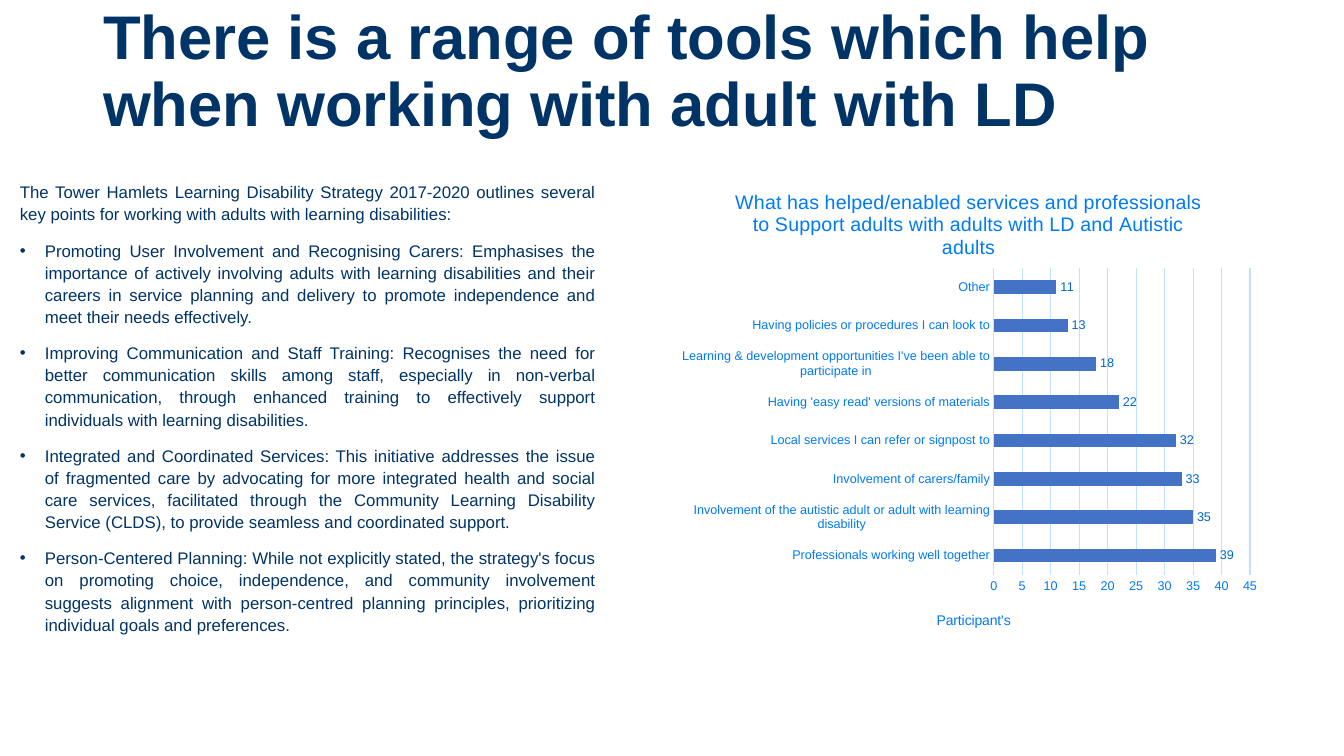
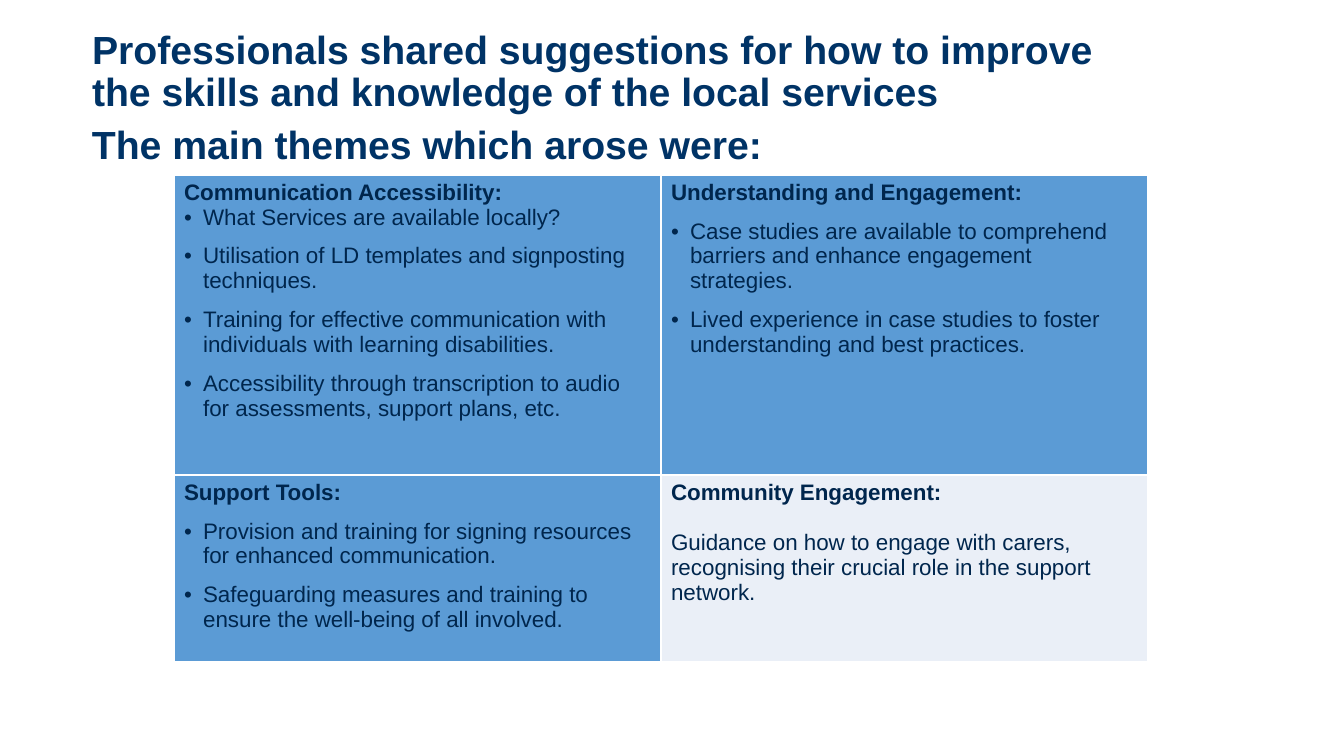
from lxml import etree
from pptx import Presentation
from pptx.chart.data import CategoryChartData
from pptx.dml.color import RGBColor
from pptx.enum.chart import XL_CHART_TYPE, XL_LABEL_POSITION, XL_TICK_MARK
from pptx.enum.text import MSO_ANCHOR, MSO_AUTO_SIZE, PP_ALIGN
from pptx.oxml.ns import qn
from pptx.util import Pt

BAR = XL_CHART_TYPE.BAR_CLUSTERED
OUTSIDE_END = XL_LABEL_POSITION.OUTSIDE_END
NO_TICK = XL_TICK_MARK.NONE
MIDDLE, TOP = MSO_ANCHOR.MIDDLE, MSO_ANCHOR.TOP
LEFT, JUSTIFY = PP_ALIGN.LEFT, PP_ALIGN.JUSTIFY
NO_FIT = MSO_AUTO_SIZE.NONE

FONT = "Arial"
TITLE_ONLY = 5
EMU_PER_PX = 914400 / 100.8
COLORS = {
    "white": "FFFFFF",
    "navy": "003366",
    "ink": "00264D",
    "chart_text": "007AF5",
    "label": "0066CC",
    "grid": "C2E0FF",
    "bar": "4472C4",
    "theme_cell": "5B9BD5",
    "pale_cell": "EAEFF7",
}

STRATEGY_INTRO = (
    "The Tower Hamlets Learning Disability Strategy 2017-2020 outlines several key points "
    "for working with adults with learning disabilities:"
)
STRATEGY_POINTS = [
    "Promoting User Involvement and Recognising Carers: Emphasises the importance of actively "
    "involving adults with learning disabilities and their careers in service planning and "
    "delivery to promote independence and meet their needs effectively.",
    "Improving Communication and Staff Training: Recognises the need for better communication "
    "skills among staff, especially in non-verbal communication, through enhanced training to "
    "effectively support individuals with learning disabilities.",
    "Integrated and Coordinated Services: This initiative addresses the issue of fragmented "
    "care by advocating for more integrated health and social care services, facilitated "
    "through the Community Learning Disability Service (CLDS), to provide seamless and "
    "coordinated support.",
    "Person-Centered Planning: While not explicitly stated, the strategy's focus on promoting "
    "choice, independence, and community involvement suggests alignment with person-centred "
    "planning principles, prioritizing individual goals and preferences.",
]
HELPFUL_TOOLS = {
    "Professionals working well together": 39,
    "Involvement of the autistic adult or adult with learning disability": 35,
    "Involvement of carers/family": 33,
    "Local services I can refer or signpost to": 32,
    "Having 'easy read' versions of materials": 22,
    "Learning & development opportunities I've been able to participate in": 18,
    "Having policies or procedures I can look to": 13,
    "Other": 11,
}
THEMES = [
    [
        ("Communication Accessibility:", [
            "What Services are available locally?",
            "Utilisation of LD templates and signposting techniques.",
            "Training for effective communication with individuals with learning disabilities.",
            "Accessibility through transcription to audio for assessments, support plans, etc.",
        ], 0),
        ("Understanding and Engagement:", [
            "Case studies are available to comprehend barriers and enhance engagement strategies.",
            "Lived experience in case studies to foster understanding and best practices.",
        ], 10),
    ],
    [
        ("Support Tools:", [
            "Provision and training for signing resources for enhanced communication.",
            "Safeguarding measures and training to ensure the well-being of all involved.",
        ], 10),
        ("Community Engagement:",
         "Guidance on how to engage with carers, recognising their crucial role in the "
         "support network.", 18),
    ],
]


def px(length):
    return round(length * EMU_PER_PX)


def rgb(name):
    return RGBColor.from_string(COLORS[name])


def style_font(font, size, color, bold=False):
    font.name = FONT
    font.size = Pt(size)
    font.bold = bold
    font.color.rgb = rgb(color)


def set_bounds(shape, left, top, width, height):
    shape.left, shape.top = px(left), px(top)
    shape.width, shape.height = px(width), px(height)


def add_bullet(paragraph, indent):
    properties = paragraph._p.get_or_add_pPr()
    properties.set("marL", str(px(indent)))
    properties.set("indent", str(-px(indent)))
    etree.SubElement(properties, qn("a:buFont")).set("typeface", FONT)
    etree.SubElement(properties, qn("a:buChar")).set("char", "•")


def write_paragraph(frame, text, size, color, bold=False, align=LEFT,
                    spacing=1.0, before=0, indent=0):
    first = not frame.paragraphs[0].runs
    paragraph = frame.paragraphs[0] if first else frame.add_paragraph()
    if indent:
        add_bullet(paragraph, indent)
    paragraph.alignment = align
    paragraph.line_spacing = spacing
    paragraph.space_before = Pt(before)
    run = paragraph.add_run()
    run.text = text
    style_font(run.font, size, color, bold)


def add_titled_slide(deck, text, bounds, size):
    slide = deck.slides.add_slide(deck.slide_layouts[TITLE_ONLY])
    title = slide.shapes.title
    set_bounds(title, *bounds)
    frame = title.text_frame
    frame.word_wrap = True
    frame.auto_size = NO_FIT
    frame.vertical_anchor = MIDDLE
    write_paragraph(frame, text, size, "navy", bold=True, spacing=0.9)
    return slide


def add_text_area(slide, *bounds):
    frame = slide.shapes.add_textbox(*map(px, bounds)).text_frame
    frame.word_wrap = True
    frame.vertical_anchor = TOP
    return frame


def place_chart_part(part, position, **fractions):
    for old_layout in part.findall(qn("c:layout")):
        part.remove(old_layout)
    layout = etree.Element(qn("c:layout"))
    manual = etree.SubElement(layout, qn("c:manualLayout"))
    settings = {"xMode": "edge", "yMode": "edge", **fractions}
    if "w" in fractions:
        settings = {"layoutTarget": "inner", **settings}
    for key, value in settings.items():
        etree.SubElement(manual, qn(f"c:{key}")).set("val", str(value))
    part.insert(position, layout)


def write_chart_title(title, text, size, x, y):
    write_paragraph(title.text_frame, text, size, "chart_text", align=PP_ALIGN.CENTER)
    place_chart_part(title._element, 1, x=x, y=y)


def style_line(line):
    line.color.rgb = rgb("grid")
    line.width = Pt(0.75)


def add_tools_chart(slide):
    data = CategoryChartData()
    data.categories = list(HELPFUL_TOOLS)
    data.add_series("Series 1", list(HELPFUL_TOOLS.values()))
    chart = slide.shapes.add_chart(BAR, *map(px, (672, 167, 596, 480)), data).chart
    style_font(chart.font, 10, "navy")
    chart.has_legend = False
    chart.has_title = True
    write_chart_title(
        chart.chart_title,
        "What has helped/enabled services and professionals to Support adults with "
        "adults with LD and Autistic adults",
        14, 0.1, 0.04)
    place_chart_part(chart._chartSpace.chart.plotArea, 0, x=0.54, y=0.21, w=0.43, h=0.64)

    category_axis, value_axis = chart.category_axis, chart.value_axis
    for axis in (category_axis, value_axis):
        axis.major_tick_mark = axis.minor_tick_mark = NO_TICK
        style_font(axis.tick_labels.font, 9, "chart_text")
    category_axis.has_major_gridlines = False
    style_line(category_axis.format.line)
    value_axis.minimum_scale, value_axis.maximum_scale = 0, 45
    value_axis.major_unit = 5
    value_axis.format.line.fill.background()
    value_axis.has_major_gridlines = True
    style_line(value_axis.major_gridlines.format.line)
    write_chart_title(value_axis.axis_title, "Participant's", 10, 0.44, 0.92)

    plot = chart.plots[0]
    plot.gap_width = 182
    plot.vary_by_categories = False
    bars = plot.series[0]
    bars.format.fill.solid()
    bars.format.fill.fore_color.rgb = rgb("bar")
    labels = bars.data_labels
    labels.show_value = True
    labels.position = OUTSIDE_END
    style_font(labels.font, 9, "label")


def add_cell_borders(cell):
    properties = cell._tc.get_or_add_tcPr()
    for position, side in enumerate(("lnL", "lnR", "lnT", "lnB")):
        border = etree.Element(qn(f"a:{side}"), w=str(Pt(1)))
        fill = etree.SubElement(border, qn("a:solidFill"))
        etree.SubElement(fill, qn("a:srgbClr")).set("val", COLORS["white"])
        properties.insert(position, border)


def fill_theme_cell(cell, heading, content, gap):
    bulleted = isinstance(content, list)
    cell.fill.solid()
    cell.fill.fore_color.rgb = rgb("theme_cell" if bulleted else "pale_cell")
    add_cell_borders(cell)
    frame = cell.text_frame
    write_paragraph(frame, heading, 16, "ink", bold=True)
    for index, item in enumerate(content if bulleted else [content]):
        write_paragraph(frame, item, 16, "ink", before=10 if index else gap,
                        indent=19 if bulleted else 0)


def add_themes_table(slide):
    row_heights, column_width = (300, 187), 487
    bounds = (174, 175, 2 * column_width, sum(row_heights))
    table = slide.shapes.add_table(2, 2, *map(px, bounds)).table
    table.first_row = table.horz_banding = False
    for column in table.columns:
        column.width = px(column_width)
    for row, height, themes in zip(table.rows, row_heights, THEMES):
        row.height = px(height)
        for cell, theme in zip(row.cells, themes):
            fill_theme_cell(cell, *theme)


def build_tools_slide(deck):
    slide = add_titled_slide(
        deck, "There is a range of tools which help when working with adult with LD",
        (93, 0, 1078, 146), 44)
    strategy = add_text_area(slide, 10, 175, 596, 480)
    body = {"size": 12, "color": "navy", "align": JUSTIFY, "spacing": 1.1}
    write_paragraph(strategy, STRATEGY_INTRO, **body)
    for point in STRATEGY_POINTS:
        write_paragraph(strategy, point, before=10, indent=25, **body)
    add_tools_chart(slide)


def build_themes_slide(deck):
    slide = add_titled_slide(
        deck, "Professionals shared suggestions for how to improve the skills and "
        "knowledge of the local services",
        (82, 0, 1025, 146), 28)
    lead_in = add_text_area(slide, 82, 121, 1159, 54)
    write_paragraph(lead_in, "The main themes which arose were:", 28, "navy",
                    bold=True, spacing=0.9)
    add_themes_table(slide)


def main():
    deck = Presentation()
    deck.slide_width, deck.slide_height = px(1344), px(756)
    build_tools_slide(deck)
    build_themes_slide(deck)
    deck.save("out.pptx")


if __name__ == "__main__":
    main()
